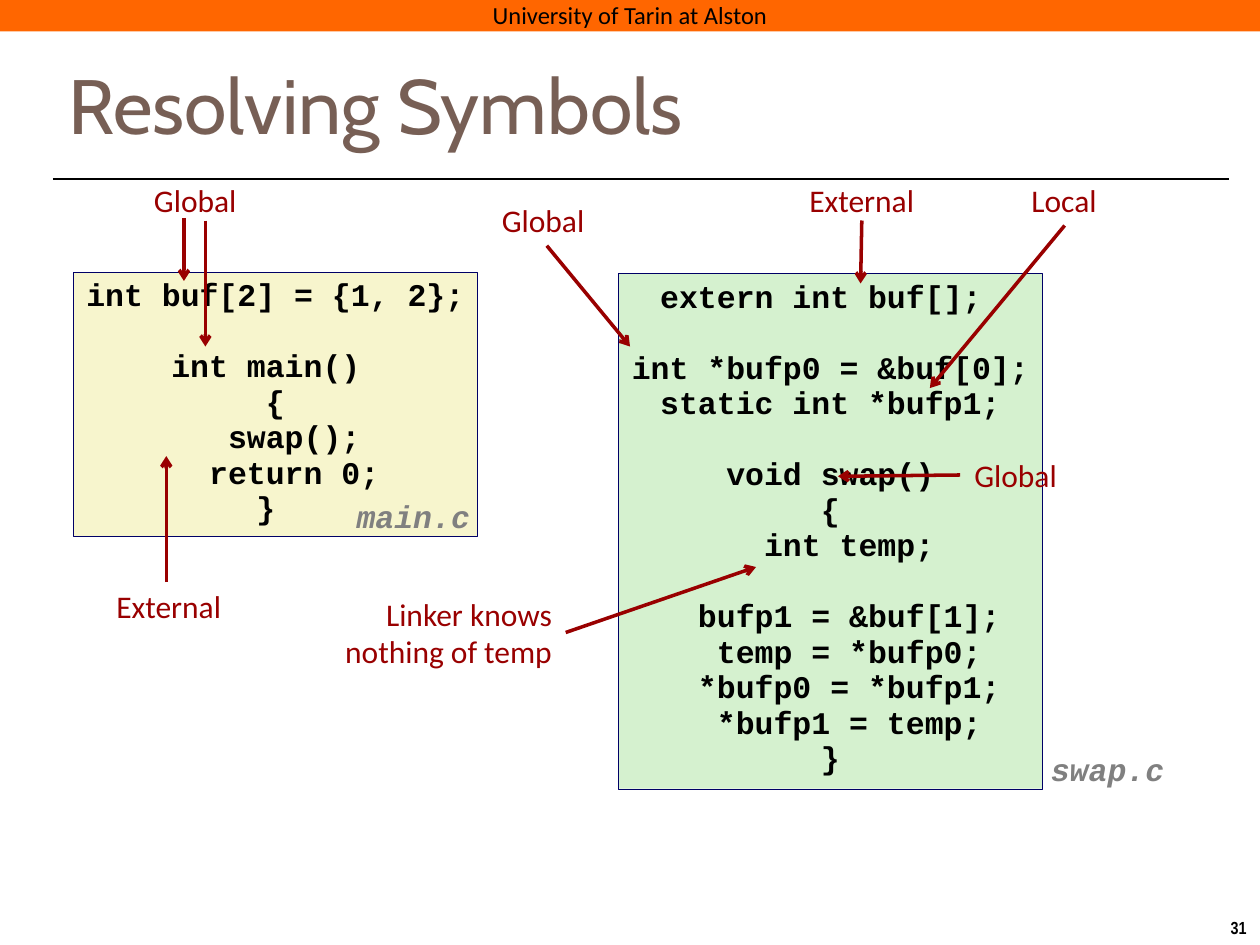
from lxml import etree
from pptx import Presentation
from pptx.dml.color import RGBColor
from pptx.enum.shapes import MSO_CONNECTOR, MSO_SHAPE
from pptx.enum.text import MSO_ANCHOR, PP_ALIGN
from pptx.oxml.ns import qn
from pptx.util import Inches, Pt

RECTANGLE, STRAIGHT = MSO_SHAPE.RECTANGLE, MSO_CONNECTOR.STRAIGHT
TOP, MIDDLE = MSO_ANCHOR.TOP, MSO_ANCHOR.MIDDLE
LEFT, CENTER, RIGHT = PP_ALIGN.LEFT, PP_ALIGN.CENTER, PP_ALIGN.RIGHT

COLORS = {
    "black": "000000", "banner": "FF6600", "title": "775F55", "note": "990000",
    "file": "808080", "main": "F7F5CD", "swap": "D5F1CF", "border": "000066",
}
BANNER = "University of Tarin at Alston"
TITLE = "Resolving Symbols"
PAGE = "31"
CODE_SIZE, CODE_SPACING = 18, 0.94
BLANK_LINE = 20.3    # points, one line of code
INDENT = 0.3         # inches, two code characters

# Code line: text, indent levels, blank lines before
MAIN_CODE = [
    ("int buf[2] = {1, 2};", 0, 0),
    ("int main() ", 0, 1),
    ("{", 0, 0),
    ("swap();", 1, 0),
    ("return 0;", 1, 0),
    ("} ", 0, 0),
]
SWAP_CODE = [
    ("extern int buf[]; ", 0, 0),
    ("int *bufp0 = &buf[0];", 0, 1),
    ("static int *bufp1;", 0, 0),
    ("void swap()", 0, 1),
    ("{", 0, 0),
    ("int temp;", 1, 0),
    ("bufp1 = &buf[1];", 1, 1),
    ("temp = *bufp0;", 1, 0),
    ("*bufp0 = *bufp1;", 1, 0),
    ("*bufp1 = temp;", 1, 0),
    ("}", 0, 0),
]
# Panel: fill, box, code, file name, left and top of the file name
PANELS = [
    ("main", (0.58, 2.16, 3.21, 2.1), MAIN_CODE, "main.c", 2.73, 3.92),
    ("swap", (4.91, 2.17, 3.36, 4.09), SWAP_CODE, "swap.c", 8.24, 5.93),
]
# Note: text, box, alignment, arrows as (from x, from y, to x, to y)
NOTES = [
    ("Global", (1.11, 1.39, 0.88, 0.4), CENTER,
     [(1.46, 1.73, 1.46, 2.23), (1.63, 1.75, 1.63, 2.75)]),
    ("External", (0.81, 4.61, 1.06, 0.4), CENTER, [(1.32, 4.62, 1.32, 3.62)]),
    ("External", (6.31, 1.39, 1.06, 0.4), CENTER, [(6.84, 1.75, 6.83, 2.25)]),
    ("Local", (8.08, 1.39, 0.73, 0.4), CENTER, [(8.45, 1.79, 7.38, 3.08)]),
    ("Global", (7.62, 3.57, 0.88, 0.4), CENTER, [(7.62, 3.77, 6.65, 3.78)]),
    ("Linker knows\nnothing of temp", (2.59, 4.67, 1.89, 0.71), RIGHT,
     [(4.49, 5.02, 6, 4.5)]),
    ("Global", (3.87, 1.55, 0.88, 0.4), CENTER, [(4.34, 1.95, 5, 2.75)]),
]


def color(name):
    return RGBColor.from_string(COLORS[name])


def write(shape, text, size, font, color_name, align=CENTER, anchor=TOP,
          bold=False, italic=False, spacing=None):
    frame = shape.text_frame
    frame.text = text
    frame.word_wrap = False
    frame.vertical_anchor = anchor
    for paragraph in frame.paragraphs:
        paragraph.alignment = align
        paragraph.line_spacing = spacing
        for run in paragraph.runs:
            run.font.size = Pt(size)
            run.font.name = font
            run.font.bold = bold
            run.font.italic = italic
            run.font.color.rgb = color(color_name)
    return frame


def add_text(slide, box, *args, **style):
    shape = slide.shapes.add_textbox(*map(Inches, box))
    return write(shape, *args, **style)


def add_box(slide, box, fill, border=None):
    shape = slide.shapes.add_shape(RECTANGLE, *map(Inches, box))
    shape.shadow.inherit = False
    shape.fill.solid()
    shape.fill.fore_color.rgb = color(fill)
    if border:
        shape.line.color.rgb = color(border)
        shape.line.width = Pt(0.25)
    else:
        shape.line.fill.background()
    return shape


def add_line(slide, ends, color_name, width, arrow=False):
    connector = slide.shapes.add_connector(STRAIGHT, *map(Inches, ends))
    connector.line.color.rgb = color(color_name)
    connector.line.width = Pt(width)
    if arrow:
        line = connector.line._get_or_add_ln()
        etree.SubElement(line, qn("a:tailEnd"), type="arrow")
    etree.SubElement(connector._element.spPr, qn("a:effectLst"))


def add_panel(slide, fill, box, code, file_name, name_left, name_top):
    shape = add_box(slide, box, fill, "border")
    frame = write(shape, "\n".join(line[0] for line in code), CODE_SIZE,
                  "Courier New", "black", bold=True, spacing=CODE_SPACING)
    for paragraph, (_, level, blanks) in zip(frame.paragraphs, code):
        paragraph.space_before = Pt(blanks * BLANK_LINE)
        properties = paragraph._p.get_or_add_pPr()
        properties.set("marL", str(Inches(level * INDENT)))
        properties.set("indent", "0")
    add_text(slide, (name_left, name_top, 1.1, 0.39), file_name, CODE_SIZE,
             "Courier New", "file", bold=True, italic=True, spacing=CODE_SPACING)


def main():
    presentation = Presentation()
    presentation.slide_width, presentation.slide_height = Inches(10), Inches(7.5)
    slide = presentation.slides.add_slide(presentation.slide_layouts[5])

    # Banner, page number and rule
    banner = add_box(slide, (0, 0, 10, 0.25), "banner")
    frame = write(banner, BANNER, 14, "Calibri", "black")
    frame.margin_left = frame.margin_right = 0
    frame.margin_top = frame.margin_bottom = 0
    add_text(slide, (9.66, 7.23, 0.34, 0.27), PAGE, 10, "Arial Narrow",
             "black", bold=True)
    add_line(slide, (0.42, 1.42, 9.75, 1.42), "black", 1.5)

    # Title
    title = slide.shapes.title
    title.left, title.top, title.width, title.height = map(
        Inches, (0.44, 0.39, 9.53, 0.86))
    frame = write(title, TITLE, 44, "Cabin", "title", LEFT, MIDDLE)
    frame.word_wrap = True

    # Code panels
    for panel in PANELS:
        add_panel(slide, *panel)

    # Notes with their arrows
    for text, box, align, arrows in NOTES:
        add_text(slide, box, text, 18, "Calibri", "note", align)
        for ends in arrows:
            add_line(slide, ends, "note", 2, arrow=True)

    presentation.save("out.pptx")


if __name__ == "__main__":
    main()
